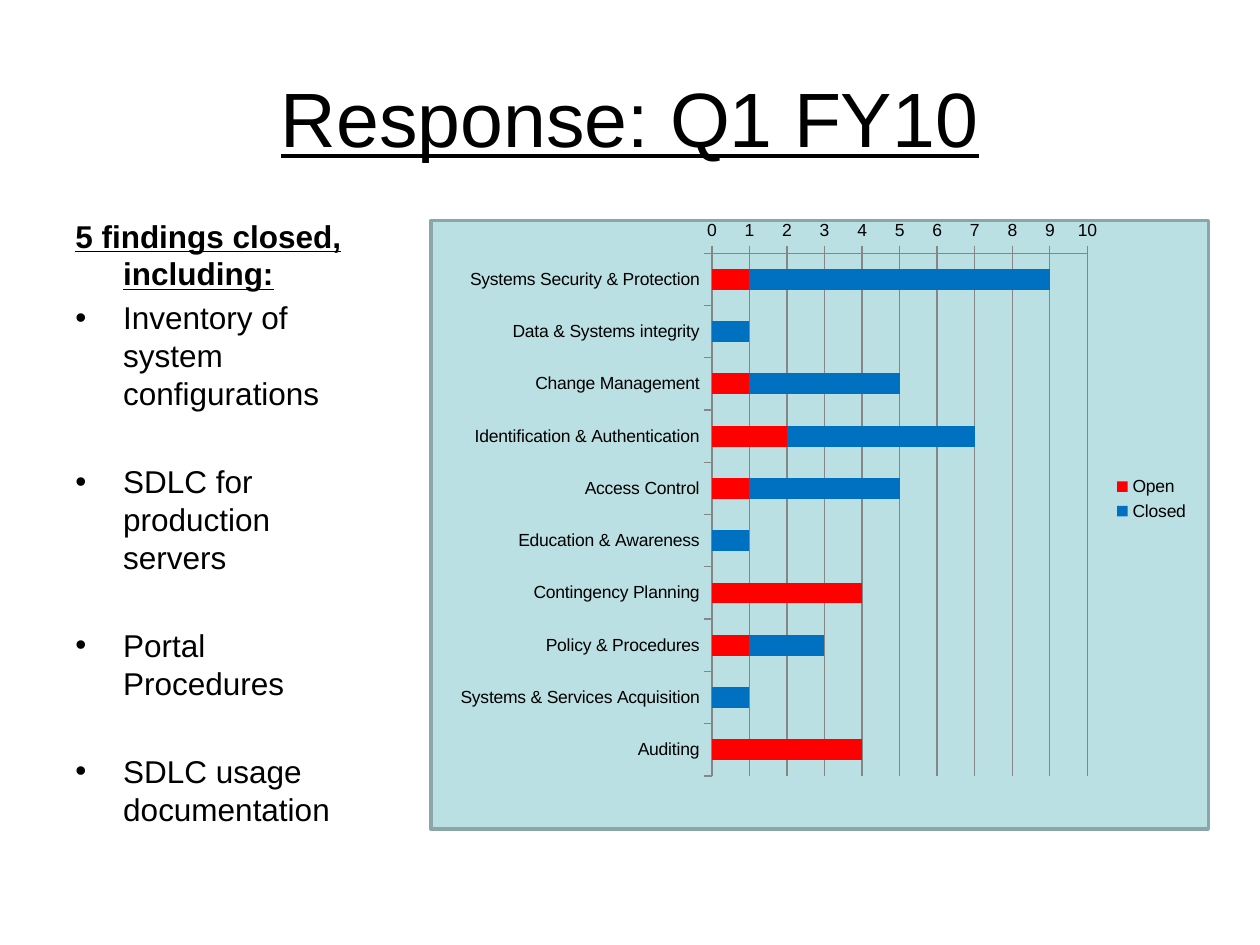
from lxml.etree import SubElement
from pptx import Presentation
from pptx.chart.data import CategoryChartData
from pptx.dml.color import RGBColor
from pptx.enum.chart import XL_CHART_TYPE as ChartType, XL_LEGEND_POSITION as LegendPos, XL_TICK_MARK as Tick
from pptx.enum.shapes import MSO_SHAPE as Shape
from pptx.enum.text import MSO_ANCHOR as Anchor, PP_ALIGN as Align
from pptx.oxml import parse_xml
from pptx.oxml.ns import nsdecls, qn
from pptx.util import Inches, Pt

TITLE = "Response: Q1 FY10"
HEADING = "5 findings closed, including:"
FINDINGS = [
    "Inventory of system configurations",
    "SDLC for production servers",
    "Portal Procedures",
    "SDLC usage documentation",
]
SERIES = ("Open", "Closed")
RESULTS = [
    ("Systems Security & Protection", 1, 8),
    ("Data & Systems integrity", 0, 1),
    ("Change Management", 1, 4),
    ("Identification & Authentication", 2, 5),
    ("Access Control", 1, 4),
    ("Education & Awareness", 0, 1),
    ("Contingency Planning", 4, 0),
    ("Policy & Procedures", 1, 2),
    ("Systems & Services Acquisition", 0, 1),
    ("Auditing", 4, 0),
]
THEME = {
    "font": "Arial", "text": "000000", "panel": "BBE0E3", "border": "8AA6A8",
    "grid": "868686", "Open": "FF0000", "Closed": "0070C0",
    "title_pt": 44, "body_pt": 18, "chart_pt": 10,
}
CHART_W, CHART_H = 6.04, 4.58
PLOT = {"x": 2.15 / CHART_W, "y": 0.34 / CHART_H,
        "w": 2.98 / CHART_W, "h": 4.15 / CHART_H}


def color(name):
    return RGBColor.from_string(THEME[name])


def box(left, top, width, height):
    return [Inches(v) for v in (left, top, width, height)]


def style_font(font, size):
    font.name = THEME["font"]
    font.size = Pt(THEME[size])
    font.color.rgb = color("text")


def add_text(p, text, size="body_pt", bold=False, underline=False,
             align=Align.LEFT, before=0, hanging=0, bullet=None):
    p.alignment = align
    p.space_before = Pt(before)
    if hanging:
        pPr = p._p.get_or_add_pPr()
        pPr.set("marL", str(Inches(hanging)))
        pPr.set("indent", str(-Inches(hanging)))
        if bullet:
            SubElement(pPr, qn("a:buFont")).set("typeface", THEME["font"])
            SubElement(pPr, qn("a:buChar")).set("char", bullet)
    r = p.add_run()
    r.text = text
    style_font(r.font, size)
    r.font.bold = bold
    r.font.underline = underline


def add_findings(slide):
    tf = slide.shapes.add_textbox(*box(0.5, 1.67, 2.5, 5.03)).text_frame
    tf.word_wrap = True
    add_text(tf.paragraphs[0], HEADING, bold=True, underline=True, hanging=0.38)
    for i, finding in enumerate(FINDINGS):
        add_text(tf.add_paragraph(), finding, before=28.8 if i else 3.6,
                 hanging=0.38, bullet="•")


def add_results_chart(slide):
    data = CategoryChartData()
    data.categories = [row[0] for row in RESULTS]
    for i, name in enumerate(SERIES, 1):
        data.add_series(name, [row[i] for row in RESULTS])
    chart = slide.shapes.add_chart(
        ChartType.BAR_STACKED, *box(3.5, 1.67, CHART_W, CHART_H), data).chart
    style_font(chart.font, "chart_pt")
    chart.has_title = False
    chart.has_legend = True
    chart.legend.position = LegendPos.RIGHT
    chart.legend.include_in_layout = False

    plot = chart.plots[0]
    plot.vary_by_categories = False
    plot.gap_width = 150
    plot.overlap = 100
    for s in plot.series:
        s.format.fill.solid()
        s.format.fill.fore_color.rgb = color(s.name)

    values, categories = chart.value_axis, chart.category_axis
    categories.reverse_order = True
    values.minimum_scale, values.maximum_scale, values.major_unit = 0, 10, 1
    values.has_major_gridlines = True
    for axis in (values, categories):
        axis.major_tick_mark = Tick.OUTSIDE
    for line in (values.format.line, categories.format.line,
                 values.major_gridlines.format.line):
        line.color.rgb = color("grid")
        line.width = Pt(0.75)

    area = chart._chartSpace.chart.plotArea
    for old in area.findall(qn("c:layout")):
        area.remove(old)
    sizes = "".join(f'<c:{k} val="{v:.4f}"/>' for k, v in PLOT.items())
    area.insert(0, parse_xml(
        f'<c:layout {nsdecls("c")}><c:manualLayout><c:layoutTarget val="inner"/>'
        f'<c:xMode val="edge"/><c:yMode val="edge"/>{sizes}</c:manualLayout></c:layout>'))


def main():
    prs = Presentation()
    prs.slide_width, prs.slide_height = Inches(10), Inches(7.5)
    slide = prs.slides.add_slide(prs.slide_layouts[5])

    title = slide.shapes.title
    title.left, title.top, title.width, title.height = box(0.5, 0.3, 9, 1.25)
    title.text_frame.vertical_anchor = Anchor.MIDDLE
    add_text(title.text_frame.paragraphs[0], TITLE, size="title_pt",
             underline=True, align=Align.CENTER)

    panel = slide.shapes.add_shape(Shape.RECTANGLE, *box(3.42, 1.75, 6.17, 4.83))
    panel.shadow.inherit = False
    panel.fill.solid()
    panel.fill.fore_color.rgb = color("panel")
    panel.line.color.rgb = color("border")
    panel.line.width = Pt(2)

    add_findings(slide)
    add_results_chart(slide)
    prs.save("out.pptx")


if __name__ == "__main__":
    main()
